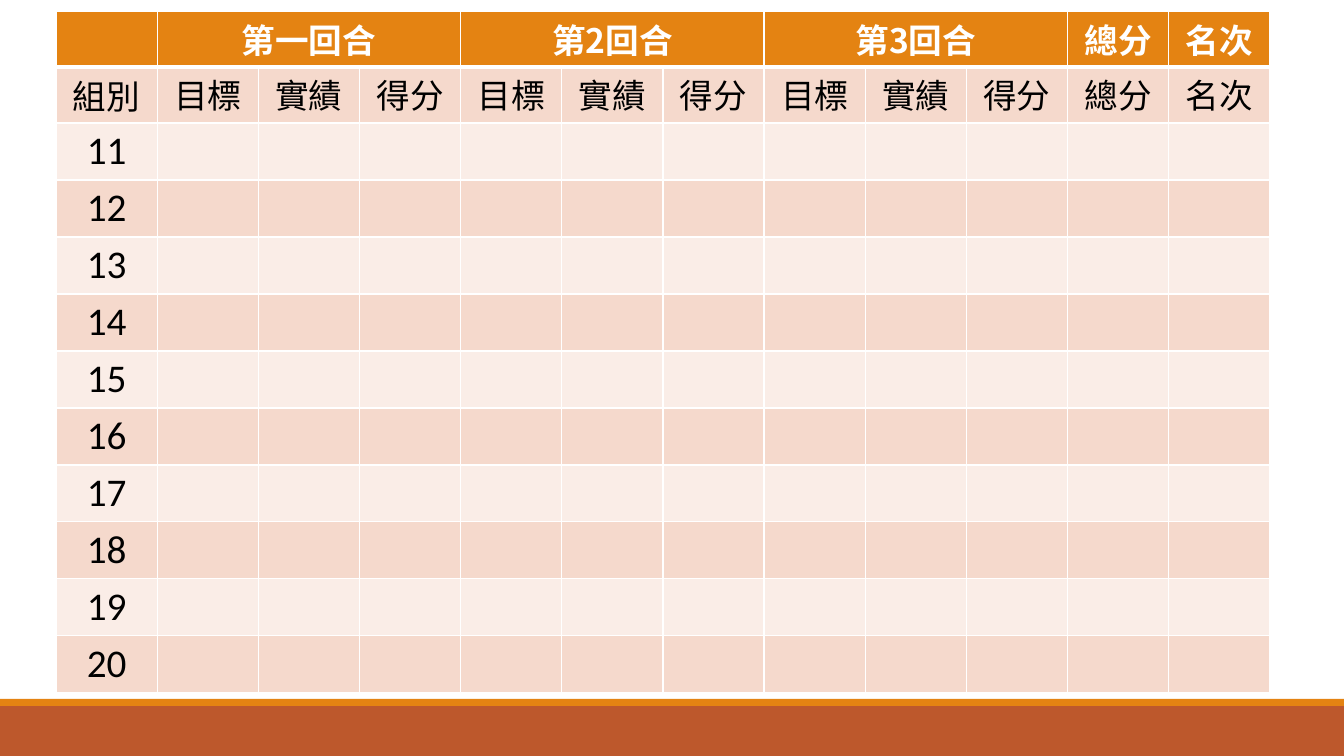
from lxml import etree
from pptx import Presentation
from pptx.dml.color import RGBColor
from pptx.enum.shapes import MSO_SHAPE
from pptx.enum.text import MSO_ANCHOR, PP_ALIGN
from pptx.oxml.ns import qn
from pptx.util import Pt

# Content
ROUNDS = ["第一回合", "第2回合", "第3回合"]
MEASURES = ["目標", "實績", "得分"]
TOTALS = ["總分", "名次"]
GROUP_LABEL = "組別"
GROUPS = range(11, 21)

# Style
RECT = MSO_SHAPE.RECTANGLE
CENTER = PP_ALIGN.CENTER
MIDDLE = MSO_ANCHOR.MIDDLE
TOP = MSO_ANCHOR.TOP
ORANGE = RGBColor(0xE4, 0x83, 0x12)
RUST = RGBColor(0xBD, 0x58, 0x2C)
BAND_DARK = RGBColor(0xF5, 0xD9, 0xCC)
BAND_LIGHT = RGBColor(0xFA, 0xED, 0xE7)
WHITE = RGBColor(0xFF, 0xFF, 0xFF)
BLACK = RGBColor(0, 0, 0)
CJK_FONT = "Noto Sans CJK SC"
LATIN_FONT = "Calibri"

# Layout in px
SLIDE_W, SLIDE_H = 1344, 756
TABLE_X, TABLE_Y, TABLE_W = 56, 11, 1214
HEAD_H, GROUP_H = 56, 57
CELL_PAD = 3
BARS = [(706, 50, RUST), (699, 7, ORANGE)]


def px(n):
    return round(n * 914400 / 100.8)


def write(cell, text, size=24, font=CJK_FONT, color=BLACK, bold=False, anchor=MIDDLE):
    cell.vertical_anchor = anchor
    p = cell.text_frame.paragraphs[0]
    p.alignment = CENTER
    r = p.add_run()
    r.text = text
    r.font.size, r.font.bold, r.font.name = Pt(size), bold, font
    r.font.color.rgb = color
    etree.SubElement(r.font._element, qn("a:ea")).set("typeface", font)


def add_borders(cell, top, bottom):
    tc_pr = cell._tc.get_or_add_tcPr()
    for i, (side, width) in enumerate([("L", 1), ("R", 1), ("T", top), ("B", bottom)]):
        ln = etree.Element(qn(f"a:ln{side}"), w=str(Pt(width)))
        fill = etree.SubElement(ln, qn("a:solidFill"))
        etree.SubElement(fill, qn("a:srgbClr")).set("val", str(WHITE))
        tc_pr.insert(i, ln)


prs = Presentation()
prs.slide_width, prs.slide_height = px(SLIDE_W), px(SLIDE_H)
s = prs.slides.add_slide(prs.slide_layouts[6])

# Footer bars
for y, h, color in BARS:
    sp = s.shapes.add_shape(RECT, 0, px(y), px(SLIDE_W), px(h))
    sp.shadow.inherit = False
    sp.fill.solid()
    sp.fill.fore_color.rgb = color
    sp.line.fill.background()

# Table grid
span = len(MEASURES)
n_cols = 1 + span * len(ROUNDS) + len(TOTALS)
heights = [HEAD_H] * 2 + [GROUP_H] * len(GROUPS)
table = s.shapes.add_table(len(heights), n_cols, px(TABLE_X), px(TABLE_Y),
                           px(TABLE_W), px(sum(heights))).table
for col in table.columns:
    col.width = px(TABLE_W / n_cols)
for i, h in enumerate(heights):
    table.rows[i].height = px(h)
    band = ORANGE if i == 0 else BAND_DARK if i % 2 else BAND_LIGHT
    for cell in table.rows[i].cells:
        cell.margin_top = cell.margin_bottom = px(CELL_PAD)
        cell.fill.solid()
        cell.fill.fore_color.rgb = band
        add_borders(cell, top=3 if i == 1 else 1, bottom=3 if i == 0 else 1)

# Header: one merged cell per round, then the totals
headings = [(1 + span * i, text) for i, text in enumerate(ROUNDS)]
for c, _ in headings:
    table.cell(0, c).merge(table.cell(0, c + span - 1))
headings += [(n_cols - len(TOTALS) + i, text) for i, text in enumerate(TOTALS)]
for c, text in headings:
    write(table.cell(0, c), text, color=WHITE, bold=True)

# Column labels
for c, text in enumerate([GROUP_LABEL] + MEASURES * len(ROUNDS) + TOTALS):
    write(table.cell(1, c), text, anchor=TOP if c else MIDDLE)

# Group numbers
for i, group in enumerate(GROUPS, start=2):
    write(table.cell(i, 0), str(group), size=28, font=LATIN_FONT)

prs.save("out.pptx")
